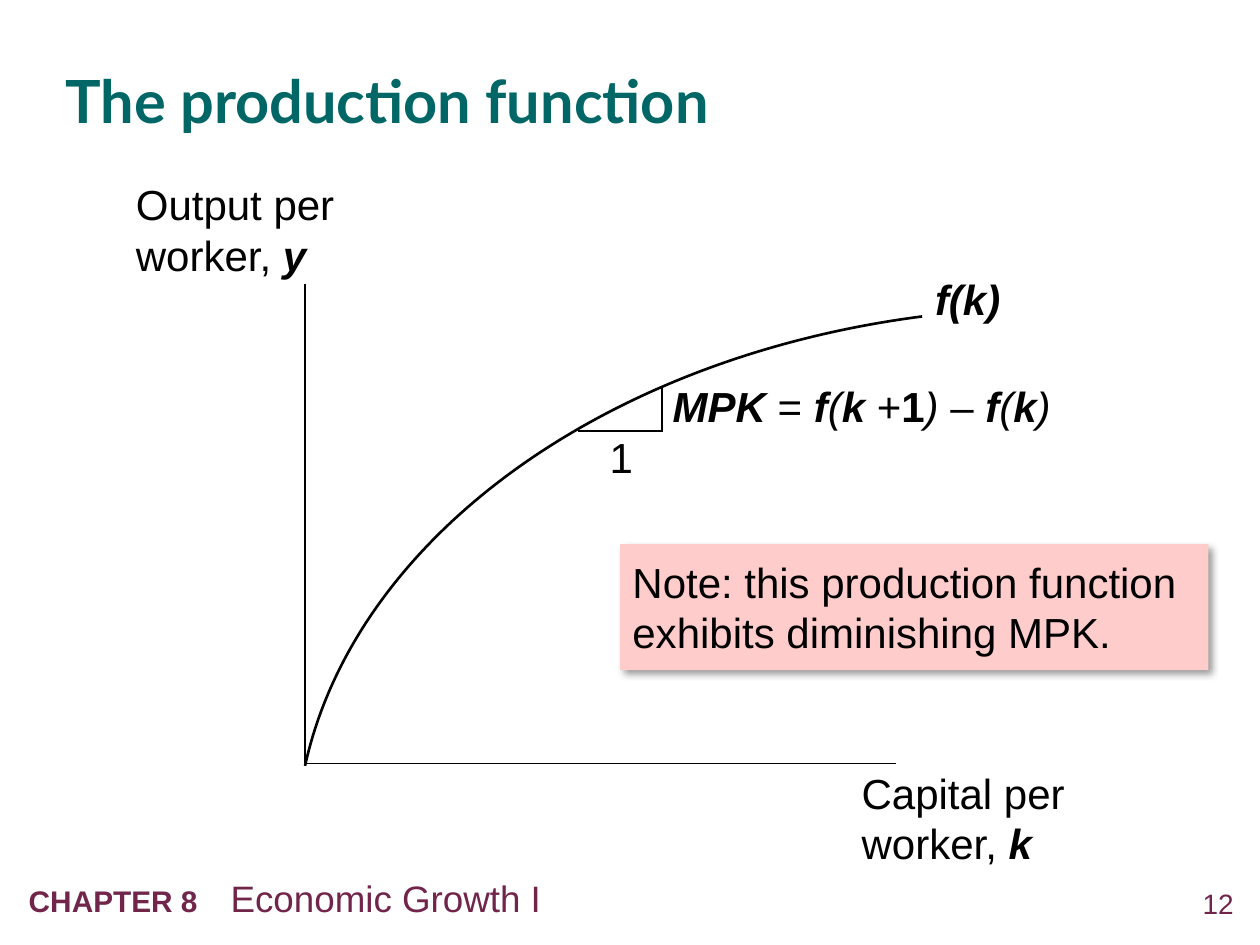
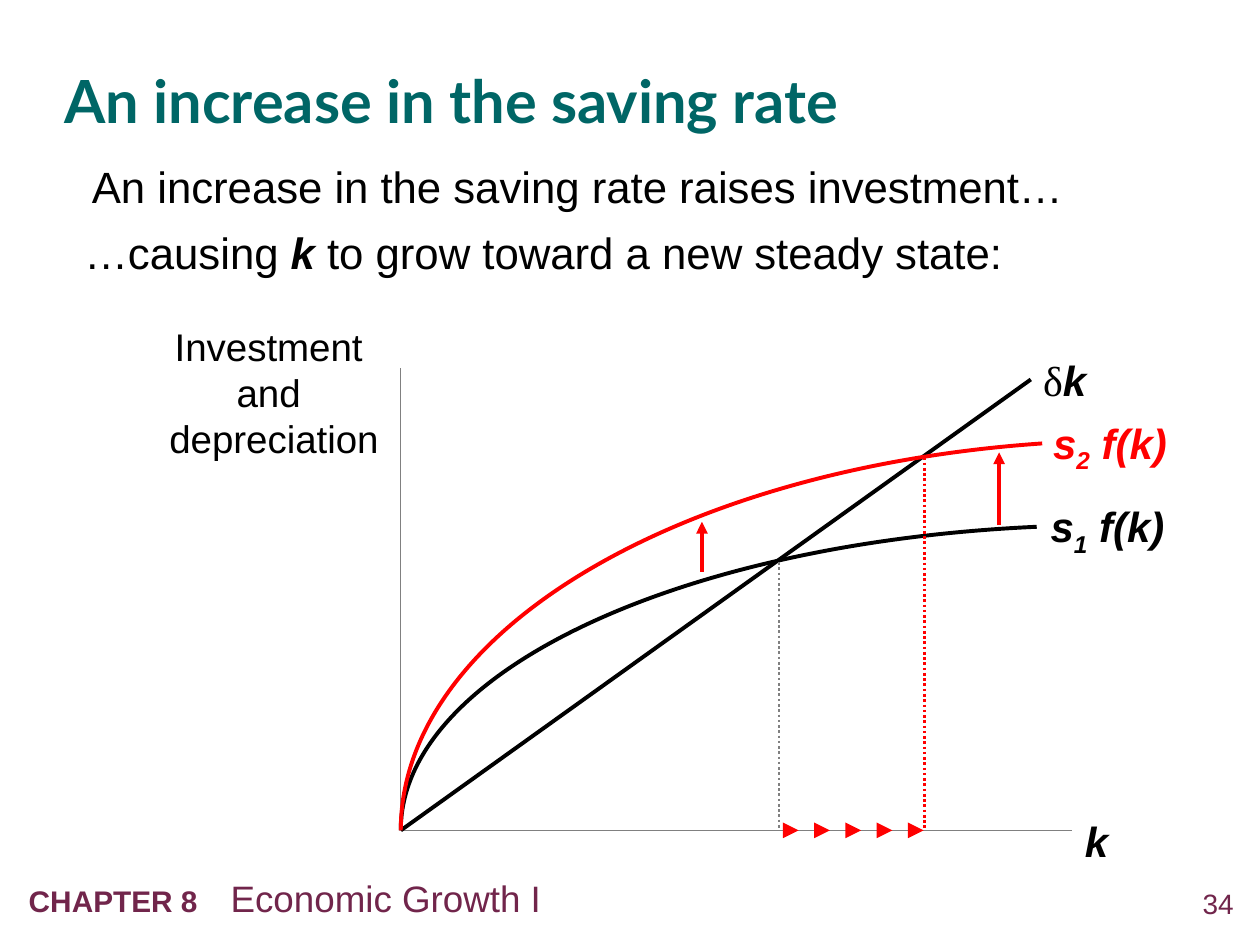
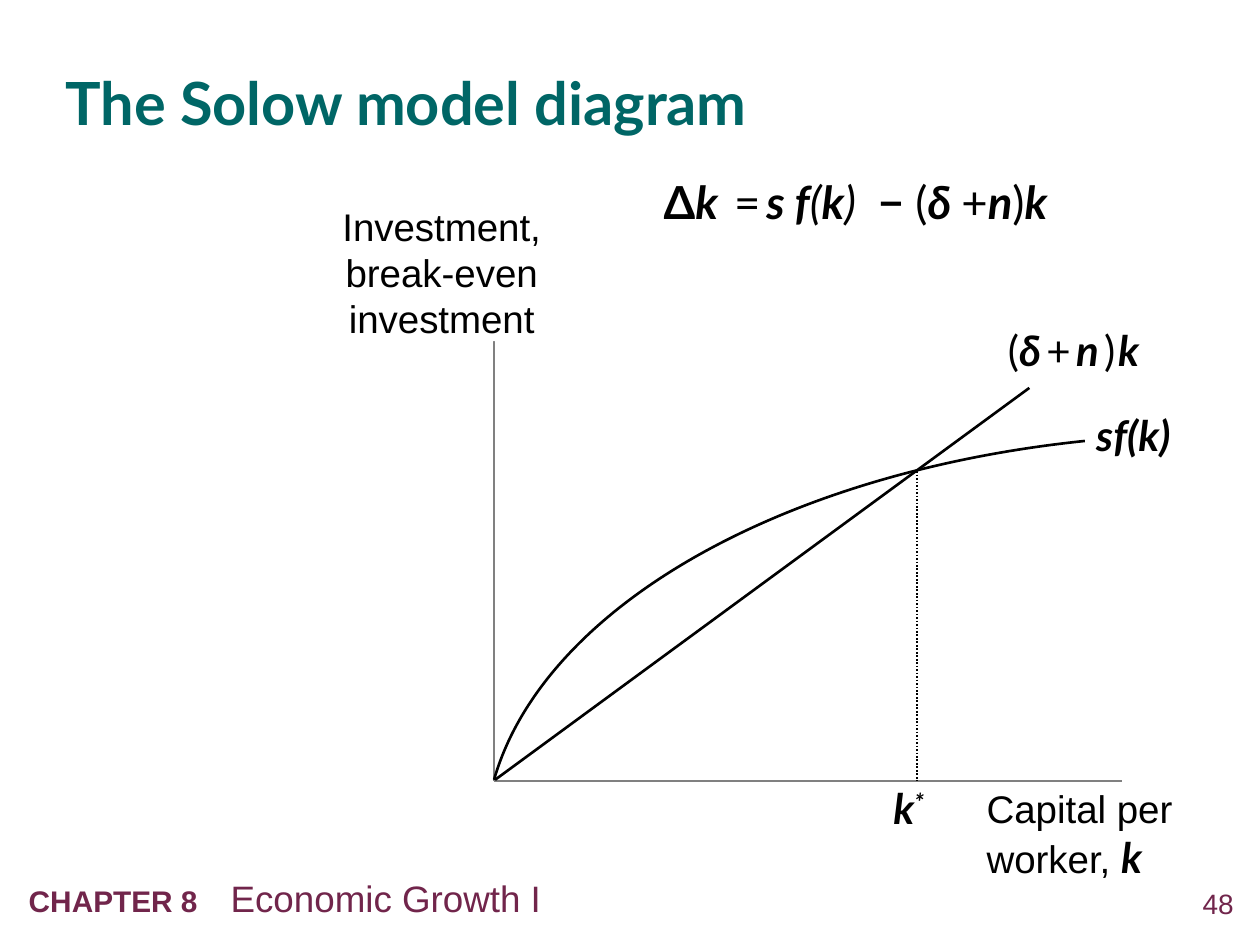
from lxml import etree
from pptx import Presentation
from pptx import util as u
from pptx.dml import color as dml_color
from pptx.enum import dml, shapes, text
from pptx.oxml import ns

# Shared look
TEAL, PLUM, PINK = "006666", "71254B", "FFCCCC"
BLACK, GRAY, RED, WHITE = "000000", "808080", "FF0000", "FFFFFF"
BODY_FONT, TITLE_FONT, SYMBOL_FONT = "Arial", "Lato", "Times New Roman"
CHAPTER, TOPIC = "CHAPTER 8", "Economic Growth I"
TITLE_ONLY, TITLE_AND_BODY = 5, 1
LEFT, CENTER, RIGHT = text.PP_ALIGN.LEFT, text.PP_ALIGN.CENTER, text.PP_ALIGN.RIGHT
DEFAULT_INSET = (0.25, 0.13)
BREAK = ("\n",)


def rgb(value):
    return dml_color.RGBColor.from_string(value)


def add_xml(parent, tag, **attributes):
    return etree.SubElement(parent, ns.qn(tag), attributes)


# Text
def format_font(font, size, name=BODY_FONT, color=BLACK, style=""):
    font.size, font.name = u.Pt(size), name
    font.color.rgb = rgb(color)
    font.bold, font.italic = "b" in style, "i" in style


def fill_paragraph(paragraph, runs, size, name=BODY_FONT, color=BLACK):
    """Each run is (text, style letters, changes of size, name, color or baseline)."""
    for content, *rest in runs:
        if content == "\n":
            paragraph.add_line_break()
            continue
        style = rest[0] if rest else ""
        changes = dict(rest[1]) if len(rest) > 1 else {}
        baseline = changes.pop("baseline", 0)
        run = paragraph.add_run()
        run.text = content
        format_font(run.font, **{"size": size, "name": name, "color": color,
                                 "style": style, **changes})
        if baseline:
            run.font._element.set("baseline", str(baseline * 1000))


def set_frame(frame, inset=(0, 0), anchor=text.MSO_ANCHOR.MIDDLE):
    frame.word_wrap = True
    frame.auto_size = text.MSO_AUTO_SIZE.NONE
    frame.vertical_anchor = anchor
    frame.margin_left = frame.margin_right = u.Cm(inset[0])
    frame.margin_top = frame.margin_bottom = u.Cm(inset[1])


def place(shape, box):
    shape.left, shape.top, shape.width, shape.height = map(u.Cm, box)


def add_label(slide, box, runs, size=24, name=BODY_FONT, color=BLACK, align=LEFT,
              inset=(0, 0), fill=None, opacity=100):
    area = [u.Cm(value) for value in box]
    if fill:
        shape = slide.shapes.add_shape(shapes.MSO_SHAPE.RECTANGLE, *area)
        shape.shadow.inherit = False
        shape.line.fill.background()
        shape.fill.solid()
        shape.fill.fore_color.rgb = rgb(fill)
        if opacity < 100:
            fill_color = shape._element.spPr.find(".//" + ns.qn("a:srgbClr"))
            add_xml(fill_color, "a:alpha", val=str(opacity * 1000))
    else:
        shape = slide.shapes.add_textbox(*area)
    anchor = text.MSO_ANCHOR.TOP if inset[1] else text.MSO_ANCHOR.MIDDLE
    set_frame(shape.text_frame, inset, anchor)
    paragraph = shape.text_frame.paragraphs[0]
    paragraph.alignment = align
    fill_paragraph(paragraph, runs, size, name, color)
    return shape


def add_shadow(shape):
    effects = shape._element.spPr.find(ns.qn("a:effectLst"))
    shadow = add_xml(effects, "a:outerShdw", blurRad=str(u.Pt(4)), dist=str(u.Pt(3)),
                     dir=str(45 * 60000), algn="tl", rotWithShape="0")
    shadow_color = add_xml(shadow, "a:srgbClr", val=BLACK)
    add_xml(shadow_color, "a:alpha", val="40000")


# Lines and curves
def add_line(slide, start, end, color=BLACK, width=1.0, dotted=False, arrow=False):
    connector = slide.shapes.add_connector(
        shapes.MSO_CONNECTOR.STRAIGHT, *[u.Cm(value) for value in (*start, *end)])
    connector.line.color.rgb = rgb(color)
    connector.line.width = u.Pt(width)
    if dotted:
        connector.line.dash_style = dml.MSO_LINE.ROUND_DOT
    if arrow:
        add_xml(connector.line._get_or_add_ln(), "a:tailEnd", type="triangle")
    add_xml(connector._element.spPr, "a:effectLst")


def add_axes(slide, origin, top, right, color, width):
    add_line(slide, (origin[0], top), origin, color, width)
    add_line(slide, origin, (right, origin[1]), color, width)


def add_curve(slide, points, color=BLACK, width=1.5):
    """Draw one cubic curve: start, two control points, end."""
    start, *others = [(u.Cm(x), u.Cm(y)) for x, y in points]
    builder = slide.shapes.build_freeform(*start)
    builder.add_line_segments(others, close=False)
    shape = builder.convert_to_shape()
    segments = shape._element.xpath(".//a:lnTo")
    outline = segments[0].getparent()
    cubic = add_xml(outline, "a:cubicBezTo")
    for segment in segments:
        cubic.append(segment[0])
        outline.remove(segment)
    shape.shadow.inherit = False
    shape.fill.background()
    shape.line.color.rgb = rgb(color)
    shape.line.width = u.Pt(width)


# Slide frame
def add_footer(slide, number):
    add_label(slide, (23.47, 17.81, 1.4, 0.81), [(str(number),)], 16,
              color=PLUM, align=RIGHT)
    footer = add_label(slide, (0.33, 17.53, 20.78, 1.14),
                       [(CHAPTER + "\t", "b", {"size": 17}), (TOPIC,)], 21,
                       color=PLUM, inset=DEFAULT_INSET)
    properties = footer.text_frame.paragraphs[0]._p.get_or_add_pPr()
    tabs = add_xml(properties, "a:tabLst")
    add_xml(tabs, "a:tab", pos=str(u.Cm(4.07)), algn="l")


def start_slide(presentation, title, title_box, number, layout=TITLE_ONLY):
    slide = presentation.slides.add_slide(presentation.slide_layouts[layout])
    add_footer(slide, number)
    place(slide.shapes.title, title_box)
    frame = slide.shapes.title.text_frame
    set_frame(frame)
    frame.text = title
    paragraph = frame.paragraphs[0]
    paragraph.alignment, paragraph.line_spacing = LEFT, 1.05
    format_font(paragraph.runs[0].font, 34, TITLE_FONT, TEAL, "b")
    return slide


def fill_body(slide, box, lines, size):
    """Each line is (left indent, space before, runs)."""
    body = slide.placeholders[1]
    place(body, box)
    frame = body.text_frame
    set_frame(frame, DEFAULT_INSET, text.MSO_ANCHOR.TOP)
    for index, (indent, space, runs) in enumerate(lines):
        paragraph = frame.add_paragraph() if index else frame.paragraphs[0]
        paragraph.alignment, paragraph.space_before = LEFT, u.Pt(space)
        properties = paragraph._p.get_or_add_pPr()
        properties.set("marL", str(u.Cm(indent)))
        properties.set("indent", "0")
        add_xml(properties, "a:buNone")
        fill_paragraph(paragraph, runs, size)


# Slides
def build_production_function(presentation):
    slide = start_slide(presentation, "The production function",
                        (1.32, 0.86, 17.45, 2.21), 12)
    add_axes(slide, (6.15, 15.39), 5.72, 18.06, BLACK, 1)
    add_label(slide, (2.74, 3.61, 4.45, 2.03),
              [("Output per ",), BREAK, ("worker, ",), ("y", "bi")])
    add_label(slide, (17.37, 15.47, 4.45, 2.03),
              [("Capital per ",), BREAK, ("worker, ",), ("k", "bi")])
    add_curve(slide, [(18.59, 6.38), (12.17, 7.21), (7.16, 10.85), (6.15, 15.44)])
    add_label(slide, (18.85, 5.51, 2.11, 1.02), [("f(k)", "bi")])
    note = add_label(slide, (12.5, 10.97, 11.86, 2.54),
                     [("Note: this production function exhibits diminishing MPK.",)],
                     inset=(0.25, 0.25), fill=PINK)
    add_shadow(note)

    # Slope triangle
    add_line(slide, (11.66, 8.69), (13.36, 8.69))
    add_line(slide, (13.34, 8.69), (13.34, 7.82))
    add_label(slide, (12.29, 8.69, 0.84, 1.02), [("1",)])
    add_label(slide, (13.56, 7.67, 8.66, 1.02),
              [("MPK", "bi"), (" = ",), ("f", "bi"), ("(", "i"), ("k ", "bi"), ("+",),
               ("1", "b"), (")", "i"), (" – ",), ("f", "bi"), ("(", "i"),
               ("k", "bi"), (")", "i")])


def build_saving_rate(presentation):
    slide = start_slide(presentation, "An increase in the saving rate",
                        (1.3, 0.66, 22.91, 2.62), 34, TITLE_AND_BODY)
    fill_body(slide, (1.45, 3.1, 22.4, 2.59), [
        (0.15, 0, [("An increase in the saving rate raises investment…",)]),
        (0, 7.3, [("…causing ",), ("k", "bi"), (" to grow toward a new steady state:",)]),
    ], 25)
    origin = (8.08, 16.74)
    base = origin[1]
    add_label(slide, (2.77, 6.38, 5.51, 3.05),
              [("Investment ",), BREAK, ("and ",), BREAK, ("depreciation",)], 22,
              align=CENTER, inset=(0.13, 0.13))
    add_axes(slide, origin, 7.42, 21.62, GRAY, 0.75)
    add_label(slide, (21.62, 16.31, 1.27, 1.27), [("k", "bi")], inset=DEFAULT_INSET)

    # Depreciation
    add_label(slide, (20.78, 7.01, 1.83, 1.27),
              [("δ", "", {"name": SYMBOL_FONT}), ("k", "bi")], inset=DEFAULT_INSET)
    add_line(slide, origin, (20.78, 7.65), width=2.25)

    # Investment before and after, each with its steady state
    investments = [
        ("1", BLACK, GRAY, [(20.9, 10.62), (13.61, 10.95), (8.08, 13.59), origin],
         (20.93, 9.96, 3, 1.27), (15.7, 11.33)),
        ("2", RED, RED, [(21.01, 8.94), (13.61, 9.45), (8.08, 12.78), origin],
         (20.98, 8.28, 3.61, 1.27), (18.64, 9.22)),
    ]
    for index, color, dot_color, points, label_box, steady_state in investments:
        add_curve(slide, points, color, 2.25)
        add_label(slide, label_box,
                  [("s", "bi"), (index, "bi", {"baseline": -25}), (" f(k)", "bi")],
                  color=color, inset=DEFAULT_INSET)
        add_line(slide, steady_state, (steady_state[0], base), dot_color, 1.5, dotted=True)

    # Upward shift and movement along the axis
    for x, bottom, top in [(20.14, 10.59, 9.12), (14.15, 11.53, 10.52)]:
        add_line(slide, (x, bottom), (x, top), RED, 2.25, arrow=True)
    for step in range(5):
        x = 15.9 + 0.63 * step
        add_line(slide, (x, base), (x + 0.2, base), RED, 3, arrow=True)


def build_solow_diagram(presentation):
    slide = start_slide(presentation, "The Solow model diagram",
                        (1.32, 0.86, 19.99, 2.29), 48)
    add_axes(slide, (9.96, 15.75), 6.02, 22.61, GRAY, 1)
    add_label(slide, (6.35, 4.09, 5.11, 2.79),
              [("Investment, break-even investment",)], 22, align=CENTER, fill=WHITE)
    add_label(slide, (19.89, 15.82, 4.45, 1.96),
              [("Capital per ",), BREAK, ("worker, ",),
               ("k", "bi", {"size": 24, "name": TITLE_FONT})], 22)

    # Investment and break-even investment
    add_curve(slide, [(21.87, 8.89), (15.7, 9.53), (10.95, 12.27), (9.96, 15.72)])
    add_label(slide, (22.1, 8.26, 2.64, 1.02), [("sf(k)", "bi")], name=TITLE_FONT)
    thin_space = (" ", "", {"size": 12})
    add_label(slide, (20.32, 6.55, 3.81, 1.02),
              [("(",), ("δ", "bi"), thin_space, ("+",), thin_space, ("n", "bi"),
               thin_space, (")",), (" ", "", {"size": 6}), ("k", "bi")], name=TITLE_FONT)
    add_line(slide, (9.98, 15.72), (20.75, 7.82), width=1.5)

    # Steady state
    add_label(slide, (18.01, 15.77, 1.47, 1.02),
              [("k", "bi"), ("*", "bi", {"baseline": 30})], name=TITLE_FONT)
    add_line(slide, (18.49, 9.5), (18.49, 15.75), dotted=True)

    # Equation of motion
    half_space = (" ", "", {"size": 13})
    add_label(slide, (13.13, 3.38, 9.96, 1.35),
              [("Δ", "b"), ("k ", "bi"), half_space, ("=",), half_space, ("s f", "bi"),
               ("(", "i"), ("k", "bi"), (") ", "i"), (" − ", "b"), ("(",), ("δ ", "bi"),
               ("+",), ("n", "bi"), (")",), ("k", "bi")],
              26, TITLE_FONT, inset=DEFAULT_INSET, fill=WHITE, opacity=50)


def main():
    presentation = Presentation()
    presentation.slide_width, presentation.slide_height = u.Cm(25.4), u.Cm(19.05)
    build_production_function(presentation)
    build_saving_rate(presentation)
    build_solow_diagram(presentation)
    presentation.save("out.pptx")


if __name__ == "__main__":
    main()
